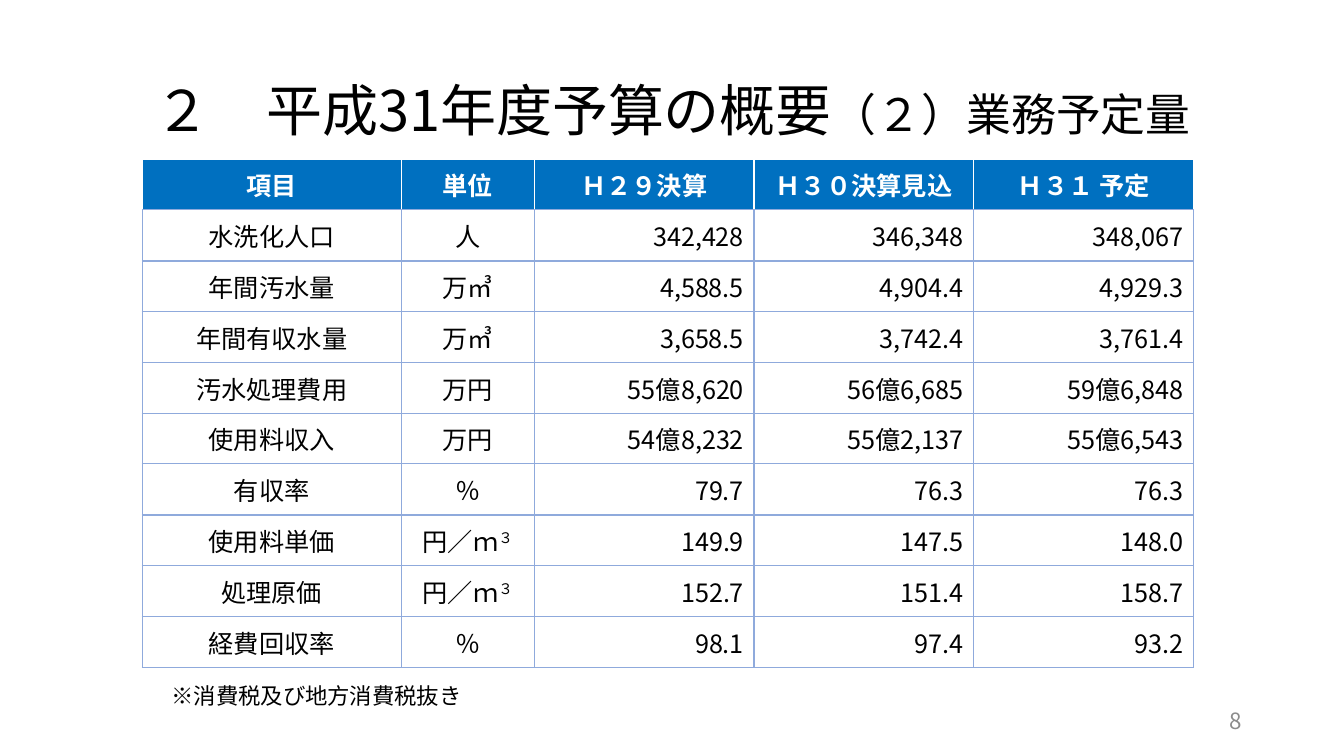
from lxml.etree import SubElement
from pptx import Presentation
from pptx.dml.color import RGBColor
from pptx.enum.text import MSO_ANCHOR, MSO_AUTO_SIZE, PP_ALIGN
from pptx.oxml.ns import qn
from pptx.util import Emu, Pt

FONT = "Noto Sans CJK JP"
BLACK, WHITE, GRAY = "000000", "FFFFFF", "8C8C8C"
HEADER_BLUE, GRID_BLUE = "0070C0", "8FAADC"
COLUMN_WIDTHS = [257, 132, 218, 218, 218]
TABLE_HEIGHT = 504
HEADER = ["項目", "単位", "Ｈ２９決算", "Ｈ３０決算見込", "Ｈ３１ 予定"]
CUBIC_PRICE = ("円／ｍ", "３")
ROWS = [
    ["水洗化人口", "人", "342,428", "346,348", "348,067"],
    ["年間汚水量", "万㎥", "4,588.5", "4,904.4", "4,929.3"],
    ["年間有収水量", "万㎥", "3,658.5", "3,742.4", "3,761.4"],
    ["汚水処理費用", "万円", "55億8,620", "56億6,685", "59億6,848"],
    ["使用料収入", "万円", "54億8,232", "55億2,137", "55億6,543"],
    ["有収率", "％", "79.7", "76.3", "76.3"],
    ["使用料単価", CUBIC_PRICE, "149.9", "147.5", "148.0"],
    ["処理原価", CUBIC_PRICE, "152.7", "151.4", "158.7"],
    ["経費回収率", "％", "98.1", "97.4", "93.2"],
]


def px(n):
    return Emu(n * 9144)


def rgb(color):
    return RGBColor.from_string(color)


def place(sp, left, top, width, height):
    sp.left, sp.top, sp.width, sp.height = map(px, (left, top, width, height))


def add_run(p, text, size, color=BLACK, bold=False, superscript=False):
    r = p.add_run()
    r.text = text
    r.font.size = Pt(size)
    r.font.bold = bold
    r.font.name = FONT
    r.font.color.rgb = rgb(color)
    rPr = r._r.get_or_add_rPr()
    SubElement(rPr, qn("a:ea"), typeface=FONT)
    if superscript:
        rPr.set("baseline", "30000")


def set_borders(cell, sides):
    tcPr = cell._tc.get_or_add_tcPr()
    for side, color in zip("LRTB", sides):
        ln = SubElement(tcPr, qn(f"a:ln{side}"), w=str(Pt(1)))
        fill = SubElement(ln, qn("a:solidFill"))
        SubElement(fill, qn("a:srgbClr"), val=color)


def fill_cell(cell, value, align, header):
    set_borders(cell, [WHITE] * 3 + [GRID_BLUE] if header else [GRID_BLUE] * 4)
    cell.fill.solid()
    cell.fill.fore_color.rgb = rgb(HEADER_BLUE if header else WHITE)
    cell.vertical_anchor = MSO_ANCHOR.MIDDLE
    p = cell.text_frame.paragraphs[0]
    p.alignment = align
    runs = value if isinstance(value, tuple) else (value,)
    for i, text in enumerate(runs):
        add_run(p, text, 18, WHITE if header else BLACK, header, i > 0)


def add_title(s):
    sp = s.shapes.title
    place(sp, 92, 40, 1150, 145)
    tf = sp.text_frame
    tf.auto_size = MSO_AUTO_SIZE.NONE
    tf.vertical_anchor = MSO_ANCHOR.MIDDLE
    p = tf.paragraphs[0]
    p.alignment = PP_ALIGN.CENTER
    p.line_spacing = 0.9
    add_run(p, "２　平成31年度予算の概要", 40)
    add_run(p, "（２）業務予定量", 32)


def add_note(s):
    sp = s.placeholders[1]
    place(sp, 160, 675, 455, 46)
    tf = sp.text_frame
    tf.auto_size = MSO_AUTO_SIZE.NONE
    p = tf.paragraphs[0]
    p.line_spacing = 0.9
    p.space_before = Pt(10)
    pPr = p._p.get_or_add_pPr()
    pPr.set("marL", "0")
    pPr.set("indent", "0")
    SubElement(pPr, qn("a:buNone"))
    add_run(p, "※消費税及び地方消費税抜き", 16)


def add_volume_table(s):
    data = [HEADER] + ROWS
    n = len(data)
    frame = s.shapes.add_table(n, len(HEADER), px(141), px(158),
                               px(sum(COLUMN_WIDTHS)), px(TABLE_HEIGHT))
    table = frame.table
    table.horz_banding = False
    for col, width in zip(table.columns, COLUMN_WIDTHS):
        col.width = px(width)
    edges = [round(TABLE_HEIGHT * i / n) for i in range(n + 1)]
    for i, values in enumerate(data):
        table.rows[i].height = px(edges[i + 1] - edges[i])
        for j, value in enumerate(values):
            align = PP_ALIGN.RIGHT if i > 0 and j > 1 else PP_ALIGN.CENTER
            fill_cell(table.cell(i, j), value, align, i == 0)


def add_page_number(s):
    tf = s.shapes.add_textbox(px(942), px(695), px(300), px(40)).text_frame
    tf.word_wrap = True
    tf.vertical_anchor = MSO_ANCHOR.MIDDLE
    p = tf.paragraphs[0]
    p.alignment = PP_ALIGN.RIGHT
    add_run(p, "8", 16, GRAY)


def main():
    prs = Presentation()
    prs.slide_width, prs.slide_height = px(1333), px(750)
    s = prs.slides.add_slide(prs.slide_layouts[1])
    add_title(s)
    add_note(s)
    add_volume_table(s)
    add_page_number(s)
    prs.save("out.pptx")


if __name__ == "__main__":
    main()
